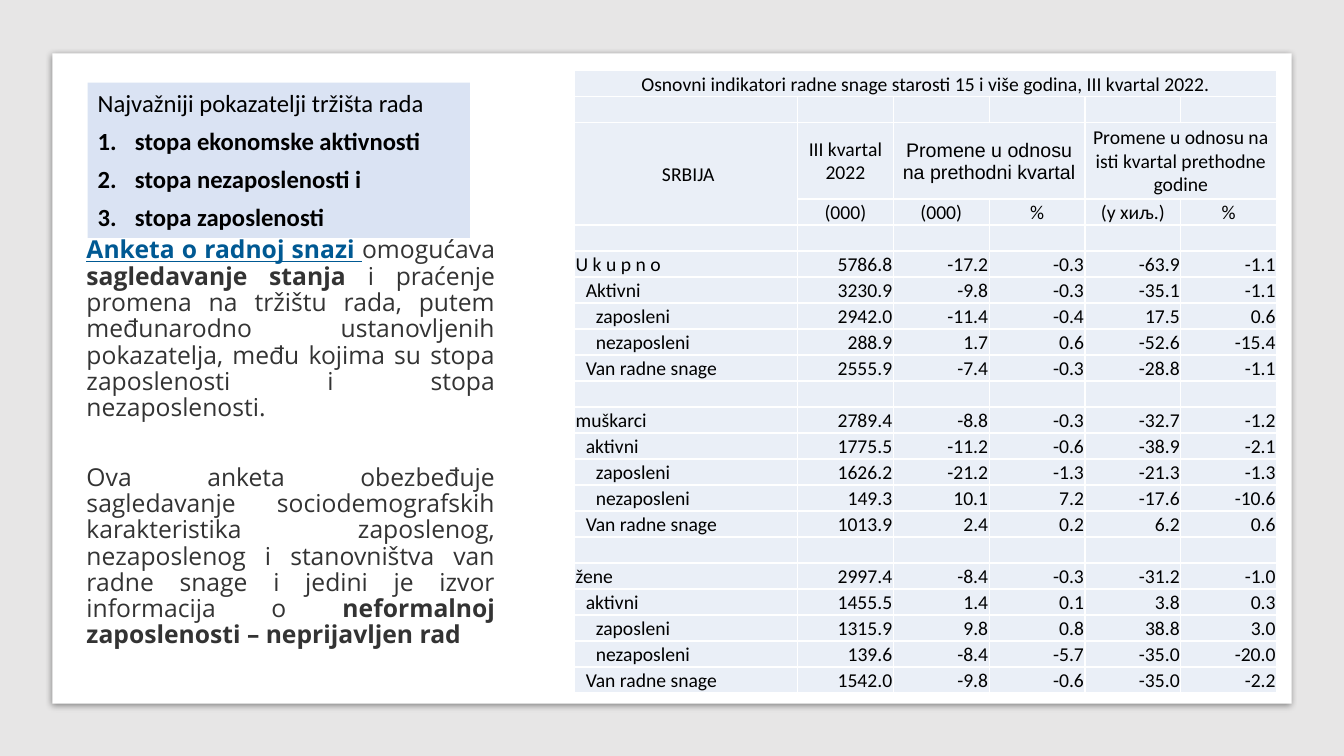
from typing import NamedTuple, Optional

from lxml.etree import SubElement
from pptx import Presentation
from pptx.dml.color import RGBColor
from pptx.enum.shapes import MSO_SHAPE
from pptx.enum.text import MSO_ANCHOR as Anchor, MSO_AUTO_SIZE as AutoSize, PP_ALIGN as Align
from pptx.oxml import parse_xml
from pptx.oxml.ns import nsdecls, qn
from pptx.util import Emu, Inches, Pt

BLACK = RGBColor(0x00, 0x00, 0x00)
WHITE = RGBColor(0xFF, 0xFF, 0xFF)
GREY = RGBColor(0xE7, 0xE6, 0xE6)
PALE_BLUE = RGBColor(0xDA, 0xE3, 0xF3)
TABLE_BLUE = RGBColor(0xEA, 0xEF, 0xF7)
LINK_BLUE = RGBColor(0x00, 0x59, 0x93)
DARK_GREY = RGBColor(0x33, 0x33, 0x33)

SLIDE_WIDTH, SLIDE_HEIGHT = Inches(13.33), Inches(7.5)
TEXT_SIZE, TABLE_SIZE = 17.6, 14


def across(percent: float) -> Emu:
    return Emu(round(SLIDE_WIDTH * percent / 100))


def down(percent: float) -> Emu:
    return Emu(round(SLIDE_HEIGHT * percent / 100))


class Box(NamedTuple):
    """A place on the slide, in percent of its width and height."""
    left: float
    top: float
    width: float
    height: float

    def lengths(self) -> tuple:
        return across(self.left), down(self.top), across(self.width), down(self.height)


class Piece(NamedTuple):
    text: str
    bold: bool = False
    link: bool = False


class Header(NamedTuple):
    row: int
    column: int
    text: str
    rows: int = 1
    columns: int = 1
    font: str = "Calibri"
    anchor: Anchor = Anchor.MIDDLE


class Indicator(NamedTuple):
    label: str
    level: int
    values: str


BACKDROP = Box(0, 0, 100, 100)
SHEET = Box(3.9, 7.07, 92.2, 86)
INDICATOR_LIST = Box(6.53, 10.93, 28.43, 20.53)
SURVEY = Box(5.7, 30.8, 31.88, 62.93)
COLUMNS = [16.58] + [7.13] * 5
ROWS = [3.44] * 2 + [10.13] + [3.44] * 19
TABLE = Box(42.76, 9.33, sum(COLUMNS), sum(ROWS))

RATES = ["stopa ekonomske aktivnosti", "stopa nezaposlenosti i", "stopa zaposlenosti"]
SURVEY_TEXT = [
    [Piece("Anketa o radnoj snazi ", bold=True, link=True), Piece("omogućava "),
     Piece("sagledavanje stanja ", bold=True),
     Piece("i praćenje promena na tržištu rada, putem međunarodno ustanovljenih pokazatelja, "
           "među kojima su stopa zaposlenosti i stopa nezaposlenosti. ")],
    [],
    [Piece("Ova anketa obezbeđuje sagledavanje sociodemografskih karakteristika zaposlenog, "
           "nezaposlenog i stanovništva van radne snage i jedini je izvor informacija o "),
     Piece("neformalnoj zaposlenosti – neprijavljen rad", bold=True)],
]
HEADERS = [
    Header(0, 0, "Osnovni indikatori radne snage starosti 15 i više godina, III kvartal 2022.",
           columns=6, anchor=Anchor.BOTTOM),
    Header(2, 0, " SRBIJA", rows=2),
    Header(2, 1, "III kvartal 2022"),
    Header(2, 2, "Promene u odnosu na prethodni kvartal", columns=2, font="Arial"),
    Header(2, 4, "Promene u odnosu na isti kvartal prethodne godine", columns=2),
    *(Header(3, column, unit)
      for column, unit in enumerate(["(000)", "(000)", "%", "(у хиљ.)", "%"], start=1)),
]
FIRST_GROUP_ROW = 5
GROUPS = [
    [Indicator("U k u p n o", 0, "5786.8 -17.2 -0.3 -63.9 -1.1"),
     Indicator("Aktivni", 1, "3230.9 -9.8 -0.3 -35.1 -1.1"),
     Indicator("zaposleni", 2, "2942.0 -11.4 -0.4 17.5 0.6"),
     Indicator("nezaposleni", 2, "288.9 1.7 0.6 -52.6 -15.4"),
     Indicator("Van radne snage", 1, "2555.9 -7.4 -0.3 -28.8 -1.1")],
    [Indicator("muškarci", 0, "2789.4 -8.8 -0.3 -32.7 -1.2"),
     Indicator("aktivni", 1, "1775.5 -11.2 -0.6 -38.9 -2.1"),
     Indicator("zaposleni", 2, "1626.2 -21.2 -1.3 -21.3 -1.3"),
     Indicator("nezaposleni", 2, "149.3 10.1 7.2 -17.6 -10.6"),
     Indicator("Van radne snage", 1, "1013.9 2.4 0.2 6.2 0.6")],
    [Indicator("žene", 0, "2997.4 -8.4 -0.3 -31.2 -1.0"),
     Indicator("aktivni", 1, "1455.5 1.4 0.1 3.8 0.3"),
     Indicator("zaposleni", 2, "1315.9 9.8 0.8 38.8 3.0"),
     Indicator("nezaposleni", 2, "139.6 -8.4 -5.7 -35.0 -20.0"),
     Indicator("Van radne snage", 1, "1542.0 -9.8 -0.6 -35.0 -2.2")],
]


def set_font(font, name: str, size: float, color: RGBColor, bold: Optional[bool] = None) -> None:
    font.name, font.size, font.bold = name, Pt(size), bold
    font.color.rgb = color


def add_rectangle(slide, box: Box, color: RGBColor):
    shape = slide.shapes.add_shape(MSO_SHAPE.RECTANGLE, *box.lengths())
    shape.shadow.inherit = False
    shape.fill.solid()
    shape.fill.fore_color.rgb = color
    shape.line.fill.background()
    return shape


def add_soft_shadow(shape) -> None:
    effects = shape._element.spPr.find(qn("a:effectLst"))
    effects.append(parse_xml(
        f'<a:outerShdw {nsdecls("a")} blurRad="{Pt(5)}" dist="{Pt(1.4)}" dir="5400000" '
        'algn="t" rotWithShape="0"><a:srgbClr val="000000"><a:alpha val="43000"/>'
        '</a:srgbClr></a:outerShdw>'))


def number_paragraph(paragraph) -> None:
    properties = paragraph._p.get_or_add_pPr()
    properties.set("marL", str(Inches(0.37)))
    properties.set("indent", str(-Inches(0.37)))
    properties.insert_element_before(
        parse_xml(f'<a:buAutoNum {nsdecls("a")} type="arabicPeriod"/>'), "a:defRPr")


def add_indicator_list(slide) -> None:
    frame = add_rectangle(slide, INDICATOR_LIST, PALE_BLUE).text_frame
    frame.auto_size = AutoSize.SHAPE_TO_FIT_TEXT
    frame.vertical_anchor = Anchor.TOP
    frame.text = "\n".join(["Najvažniji pokazatelji tržišta rada", *RATES])
    for index, paragraph in enumerate(frame.paragraphs):
        paragraph.alignment = Align.LEFT
        paragraph.space_after = Pt(6)
        set_font(paragraph.font, "Calibri", TEXT_SIZE, BLACK, bold=index > 0)
        if index > 0:
            number_paragraph(paragraph)


def add_survey_text(slide) -> None:
    frame = slide.shapes.add_textbox(*SURVEY.lengths()).text_frame
    frame.word_wrap = True
    frame.auto_size = AutoSize.SHAPE_TO_FIT_TEXT
    frame.text = "\n" * (len(SURVEY_TEXT) - 1)
    for paragraph, pieces in zip(frame.paragraphs, SURVEY_TEXT):
        paragraph.alignment = Align.JUSTIFY
        paragraph.line_spacing = 0.89
        paragraph.space_after = Pt(6)
        set_font(paragraph.font, "Open Sans", TEXT_SIZE, DARK_GREY)
        for piece in pieces:
            run = paragraph.add_run()
            run.text = piece.text
            run.font.bold = piece.bold
            if piece.link:
                run.font.underline = True
                run.font.color.rgb = LINK_BLUE


def style_cell(cell) -> None:
    """Give a cell its fill, margins, font and white borders."""
    cell.margin_left = cell.margin_top = cell.margin_right = Inches(0.01)
    cell.margin_bottom = 0
    cell.vertical_anchor = Anchor.MIDDLE
    set_font(cell.text_frame.paragraphs[0].font, "Calibri", TABLE_SIZE, BLACK)
    properties = cell._tc.get_or_add_tcPr()
    for side in ("lnL", "lnR", "lnT", "lnB"):
        border = SubElement(properties, qn(f"a:{side}"), w=str(Pt(1)))
        SubElement(SubElement(border, qn("a:solidFill")), qn("a:srgbClr"), val=str(WHITE))
    cell.fill.solid()
    cell.fill.fore_color.rgb = TABLE_BLUE


def write_cell(cell, text: str, alignment: Align) -> None:
    paragraph = cell.text_frame.paragraphs[0]
    paragraph.add_run().text = text
    paragraph.alignment = alignment


def add_labour_table(slide) -> None:
    table = slide.shapes.add_table(len(ROWS), len(COLUMNS), *TABLE.lengths()).table
    table.first_row = table.horz_banding = False
    for column, width in zip(table.columns, COLUMNS):
        column.width = across(width)
    for row, height in zip(table.rows, ROWS):
        row.height = down(height)
    for cell in table.iter_cells():
        style_cell(cell)
    for header in HEADERS:
        cell = table.cell(header.row, header.column)
        if header.rows * header.columns > 1:
            cell.merge(table.cell(header.row + header.rows - 1,
                                  header.column + header.columns - 1))
        cell.vertical_anchor = header.anchor
        write_cell(cell, header.text, Align.CENTER)
        cell.text_frame.paragraphs[0].font.name = header.font
    for group_index, group in enumerate(GROUPS):
        top = FIRST_GROUP_ROW + group_index * (len(group) + 1)
        for row, indicator in enumerate(group, start=top):
            label = table.cell(row, 0)
            label.margin_left = Inches(0.01 + 0.1 * indicator.level)
            write_cell(label, indicator.label, Align.LEFT)
            for column, value in enumerate(indicator.values.split(), start=1):
                write_cell(table.cell(row, column), value, Align.RIGHT)


def main() -> None:
    presentation = Presentation()
    presentation.slide_width, presentation.slide_height = SLIDE_WIDTH, SLIDE_HEIGHT
    slide = presentation.slides.add_slide(presentation.slide_layouts[6])
    add_rectangle(slide, BACKDROP, GREY)
    add_soft_shadow(add_rectangle(slide, SHEET, WHITE))
    add_indicator_list(slide)
    add_survey_text(slide)
    add_labour_table(slide)
    presentation.save("out.pptx")


if __name__ == "__main__":
    main()
